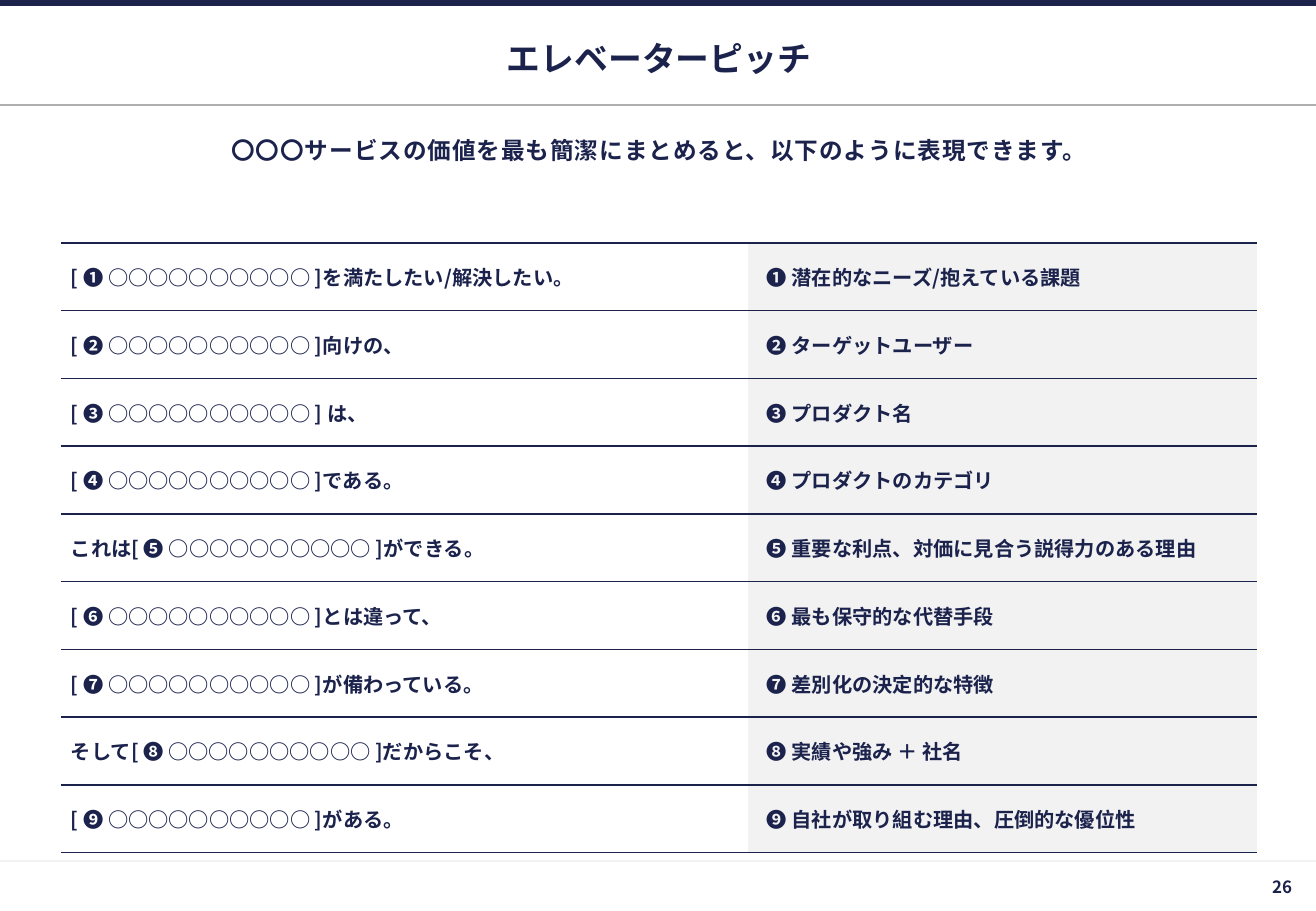
from lxml import etree
from pptx import Presentation
from pptx import util as u
from pptx.dml.color import RGBColor
from pptx.enum import shapes, text
from pptx.oxml import ns

PX = 914400 / 121.5
FONT = "Noto Sans CJK JP"
COLORS = {"navy": "1B224C", "white": "FFFFFF", "pale": "F2F2F2", "rule": "AFAFAF"}


def px(*lengths):
    return [round(length * PX) for length in lengths]


def write(frame, wording, size, align, anchor, margins):
    frame.text = wording
    frame_format = dict(zip(("margin_left", "margin_top", "margin_right", "margin_bottom"), px(*margins)))
    frame_format.update(word_wrap=True, auto_size=text.MSO_AUTO_SIZE.NONE, vertical_anchor=anchor)
    for name, value in frame_format.items():
        setattr(frame, name, value)
    paragraph = frame.paragraphs[0]
    paragraph.alignment = align
    run = paragraph.runs[0]
    for name, value in {"size": u.Pt(size), "bold": True, "name": FONT}.items():
        setattr(run.font, name, value)
    run.font.color.rgb = RGBColor.from_string(COLORS["navy"])
    etree.SubElement(run.font._element, ns.qn("a:ea"), typeface=FONT)
    return paragraph


prs = Presentation()
prs.slide_width, prs.slide_height = px(1316, 911)
slide = prs.slides.add_slide(prs.slide_layouts[1])
title, message = slide.placeholders
ALIGN, ANCHOR = text.PP_ALIGN, text.MSO_ANCHOR

for y, color in ((861, "pale"), (105, "rule")):
    rule = slide.shapes.add_connector(shapes.MSO_CONNECTOR.STRAIGHT, *px(0, y, 1316, y))
    rule.line.width = u.Pt(0.75)
    rule.line.color.rgb = RGBColor.from_string(COLORS[color])
    etree.SubElement(rule._element.spPr, ns.qn("a:effectLst"))

top_band = slide.shapes.add_shape(shapes.MSO_SHAPE.RECTANGLE, *px(0, 0, 1316, 6))
top_band.shadow.inherit = False
top_band.fill.solid()
top_band.fill.fore_color.rgb = RGBColor.from_string(COLORS["navy"])
top_band.line.fill.background()

page = slide.shapes.add_textbox(*px(1081, 863, 235, 48))
for holder, box in ((title, (61, 32, 1196, 52)), (message, (61, 134, 1196, 81))):
    holder.left, holder.top, holder.width, holder.height = px(*box)

write(title.text_frame, "エレベーターピッチ", 20, ALIGN.CENTER, ANCHOR.MIDDLE, (0, 0, 0, 0))
write(page.text_frame, "26", 10, ALIGN.RIGHT, ANCHOR.MIDDLE, (5, 5, 24, 5))
summary = write(
    message.text_frame,
    "〇〇〇サービスの価値を最も簡潔にまとめると、以下のように表現できます。",
    14, ALIGN.CENTER, ANCHOR.TOP, (5, 5, 5, 5),
)
for name, value in {"space_before": u.Pt(0), "space_after": u.Pt(6), "line_spacing": 0.9}.items():
    setattr(summary, name, value)
summary.runs[0].font._element.set("spc", "50")
bullet_format = summary._p.get_or_add_pPr()
for name in ("marL", "indent"):
    bullet_format.set(name, "0")
etree.SubElement(bullet_format, ns.qn("a:buNone"))

PITCH = [
    ("", "を満たしたい/解決したい。", "潜在的なニーズ/抱えている課題"),
    ("", "向けの、", "ターゲットユーザー"),
    ("", " は、", "プロダクト名"),
    ("", "である。", "プロダクトのカテゴリ"),
    ("これは", "ができる。", "重要な利点、対価に見合う説得力のある理由"),
    ("", "とは違って、", "最も保守的な代替手段"),
    ("", "が備わっている。", "差別化の決定的な特徴"),
    ("そして", "だからこそ、", "実績や強み ＋ 社名"),
    ("", "がある。", "自社が取り組む理由、圧倒的な優位性"),
]
pitch = slide.shapes.add_table(len(PITCH), 2, *px(61, 243, 1196, 610)).table
pitch.first_row = pitch.horz_banding = False
for column, width in zip(pitch.columns, px(687, 509)):
    column.width = width

for row, number, (lead, ending, meaning) in zip(pitch.rows, "❶❷❸❹❺❻❼❽❾", PITCH):
    phrase = f"{lead}[ {number} {'○' * 10} ]{ending}"
    columns = ((phrase, "white", 10), (f"{number} {meaning}", "pale", 19))
    for cell, (wording, color, left) in zip(row.cells, columns):
        write(cell.text_frame, wording, 12, ALIGN.LEFT, ANCHOR.MIDDLE, (0, 0, 0, 0))
        cell.vertical_anchor = ANCHOR.MIDDLE
        cell.margin_left, cell.margin_top, cell.margin_right, cell.margin_bottom = px(left, 19, 5, 19)
        borders = cell._tc.get_or_add_tcPr()
        for side in "LRTB":
            border = etree.SubElement(borders, ns.qn(f"a:ln{side}"), w=str(u.Pt(1)))
            if side in "LR":
                etree.SubElement(border, ns.qn("a:noFill"))
            else:
                paint = etree.SubElement(border, ns.qn("a:solidFill"))
                etree.SubElement(paint, ns.qn("a:srgbClr"), val=COLORS["navy"])
        cell.fill.solid()
        cell.fill.fore_color.rgb = RGBColor.from_string(COLORS[color])

prs.save("out.pptx")
